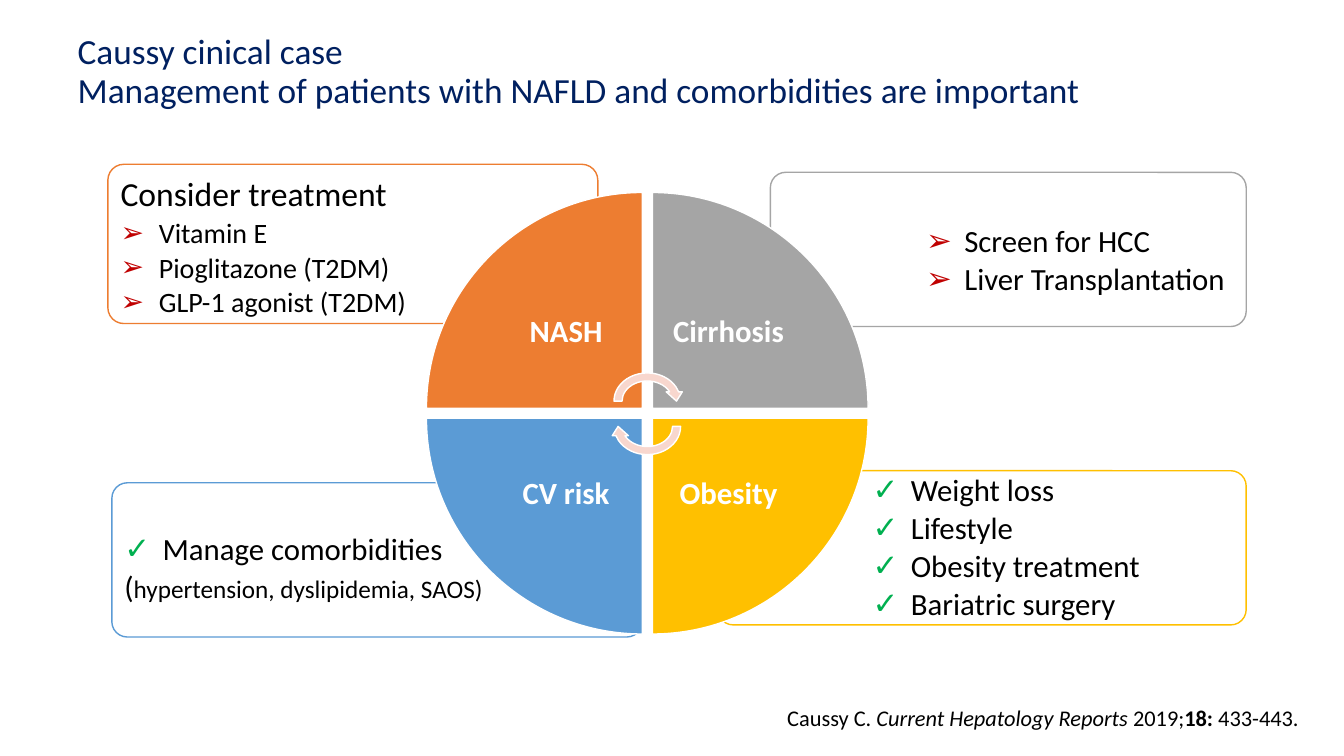
import copy
from dataclasses import dataclass

import pptx
import pptx.dml.color
import pptx.enum.shapes
import pptx.enum.text
import pptx.oxml.ns
import pptx.util
from lxml import etree

Inches = pptx.util.Inches
Pt = pptx.util.Pt
RGB = pptx.dml.color.RGBColor.from_string
Kind = pptx.enum.shapes.MSO_SHAPE
Align = pptx.enum.text.PP_ALIGN
Anchor = pptx.enum.text.MSO_ANCHOR
qn = pptx.oxml.ns.qn


@dataclass(frozen=True)
class Theme:
    font: str = "Calibri"
    navy: str = "002060"
    black: str = "000000"
    white: str = "FFFFFF"
    orange: str = "ED7D31"
    gray: str = "A5A5A5"
    gold: str = "FFC000"
    blue: str = "5B9BD5"
    pink: str = "F8D7CE"
    red: str = "C00000"
    green: str = "00B050"
    title: float = 25.2
    head: int = 24
    body: int = 22
    item: int = 20
    small: int = 18
    note: int = 16


theme = Theme()
marks = {"➢": theme.red, "✓": theme.green}


def write(frame, *runs, size=theme.body, color=theme.black, bold=False,
          align=Align.LEFT, line=0.9, after=0, mark=None):
    """Add a paragraph; a run is text or (text, font settings), "\\n" breaks the line."""
    para = frame.paragraphs[-1]
    if para.runs:
        para = frame.add_paragraph()
    para.alignment, para.line_spacing = align, line
    para.space_before, para.space_after = Pt(0), Pt(after)
    if mark:
        props = para._p.get_or_add_pPr()
        props.set("marL", str(Inches(0.38)))
        props.set("indent", str(-Inches(0.38)))
        tint = etree.SubElement(props, qn("a:buClr"))
        etree.SubElement(tint, qn("a:srgbClr"), val=marks[mark])
        etree.SubElement(props, qn("a:buFont"), typeface="Arial")
        etree.SubElement(props, qn("a:buChar"), char=mark)
    for part in runs:
        text, extra = (part, {}) if isinstance(part, str) else part
        if text == "\n":
            para.add_line_break()
            para._p[-1].append(copy.deepcopy(para.runs[-1].font._rPr))
            continue
        run = para.add_run()
        run.text = text
        run.font.name = theme.font
        run.font.size = Pt(extra.get("size", size))
        run.font.bold = extra.get("bold", bold)
        run.font.italic = extra.get("italic", False)
        run.font.color.rgb = RGB(color)


def style(shape, fill, edge, pads=(0, 0, 0, 0), anchor=Anchor.TOP):
    """Set fill, outline and text insets (left, top, right, bottom)."""
    shape.shadow.inherit = False
    shape.fill.solid()
    shape.fill.fore_color.rgb = RGB(fill)
    shape.line.color.rgb = RGB(edge)
    shape.line.width = Pt(1)
    frame = shape.text_frame
    frame.word_wrap = True
    frame.vertical_anchor = anchor
    (frame.margin_left, frame.margin_top,
     frame.margin_right, frame.margin_bottom) = map(Inches, pads)
    return frame


deck = pptx.Presentation()
deck.slide_width, deck.slide_height = Inches(13.33), Inches(7.5)
slide = deck.slides.add_slide(deck.slide_layouts[5])
shapes = slide.shapes

# Title
title = shapes.title
title.left, title.top = Inches(0.67), Inches(0.42)
title.width, title.height = Inches(12), Inches(0.6)
title.text_frame.auto_size = pptx.enum.text.MSO_AUTO_SIZE.NONE
title.text_frame.vertical_anchor = Anchor.MIDDLE
write(title.text_frame, "Caussy cinical case", "\n",
      "Management of patients with NAFLD and comorbidities are important",
      size=theme.title, color=theme.navy)

# Detail boxes: place, edge, insets, paragraphs of (runs, size, bullet)
boxes = [
    ((7.12, 4.67, 5.24, 1.53), theme.gold, (1.49, 0, 0.09, 0),
     [([text], theme.body, "✓") for text in
      ("Weight loss", "Lifestyle", "Obesity treatment", "Bariatric surgery")]),
    ((1.11, 4.79, 5.26, 1.53), theme.blue, (0.08, 0.46, 1.5, 0.09),
     [(["Manage comorbidities"], theme.body, "✓"),
      (["(", ("hypertension, dyslipidemia, SAOS)", {"size": theme.small})],
       theme.body, None)]),
    ((7.64, 1.71, 4.72, 1.53), theme.gray, (1.5, 0.49, 0.09, 0.09),
     [([text], theme.body, "➢") for text in
      ("Screen for HCC", "Liver Transplantation")]),
    ((1.07, 1.63, 4.86, 1.58), theme.orange, (0.08, 0.08, 1.55, 0),
     [(["Consider treatment"], theme.head, None)]
     + [([text], theme.item, "➢") for text in
        ("Vitamin E", "Pioglitazone (T2DM)", "GLP-1 agonist (T2DM)")]),
]
for place, edge, pads, lines in boxes:
    box = shapes.add_shape(Kind.ROUNDED_RECTANGLE, *map(Inches, place))
    box.adjustments[0] = 0.1
    frame = style(box, theme.white, edge, pads)
    for runs, size, mark in lines:
        after = 4.4 if size == theme.head else 0.15 * size
        write(frame, *runs, size=size, mark=mark, after=after)

# Quarter discs around the hub; the signs point away from it
hub_x, hub_y, gap, radius = 6.42, 4.1, 0.05, 2.14
inner, outer, bend = 0.17, 0.8, 0.55
quarters = [("NASH", theme.orange, -1, -1), ("Cirrhosis", theme.gray, 1, -1),
            ("Obesity", theme.gold, 1, 1), ("CV risk", theme.blue, -1, 1)]
for label, fill, dx, dy in quarters:
    x, y = hub_x + dx * gap, hub_y + dy * gap
    path = shapes.build_freeform(Inches(x), Inches(y))
    path.add_line_segments([(Inches(x + dx * radius), Inches(y)),
                            (Inches(x), Inches(y + dy * radius))], close=True)
    wedge = path.convert_to_shape()
    # Bend the outer edge into a quarter circle
    chord = wedge._element.findall(".//" + qn("a:lnTo"))[1]
    arc = etree.Element(qn("a:cubicBezTo"))
    for along, down in ((1, bend), (bend, 1), (0, 1)):
        etree.SubElement(arc, qn("a:pt"),
                         x=str(Inches(radius * (along if dx > 0 else 1 - along))),
                         y=str(Inches(radius * (down if dy > 0 else 1 - down))))
    chord.getparent().replace(chord, arc)
    pads = ((outer, inner)[dx > 0], (outer, inner)[dy > 0],
            (inner, outer)[dx > 0], (inner, outer)[dy > 0])
    frame = style(wedge, fill, theme.white, pads, Anchor.MIDDLE)
    write(frame, label, color=theme.white, bold=True, align=Align.CENTER)

# Cycle arrows
for top, turn in ((3.66, 0), (3.91, 180)):
    arrow = shapes.add_shape(Kind.CIRCULAR_ARROW, Inches(6.05), Inches(top),
                             Inches(0.74), Inches(0.64))
    arrow.rotation = turn
    style(arrow, theme.pink, theme.white)

# Citation
cite = shapes.add_textbox(Inches(7.71), Inches(6.94), Inches(5.34), Inches(0.64))
cite.text_frame.word_wrap = False
write(cite.text_frame, "Caussy C. ",
      ("Current Hepatology Reports", {"italic": True}), " 2019;",
      ("18:", {"bold": True}), " 433-443.", size=theme.note, line=1.0)

deck.save("out.pptx")
